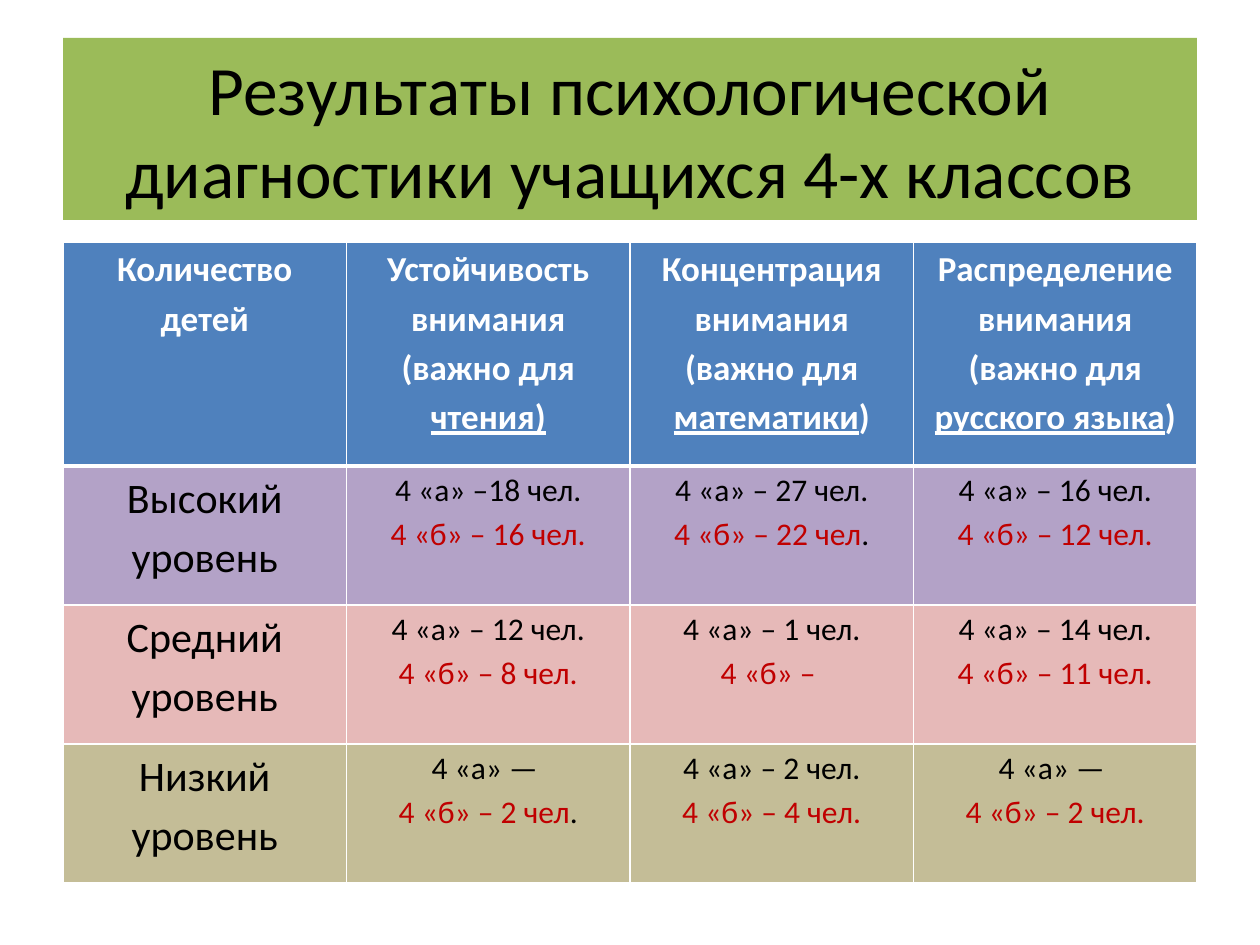
"""Builds a slide with a table of attention test results for the fourth grades."""
from lxml.etree import SubElement
from pptx import Presentation
from pptx.dml.color import RGBColor
from pptx.enum.text import MSO_ANCHOR, MSO_AUTO_SIZE, PP_ALIGN
from pptx.oxml.ns import qn
from pptx.util import Pt

PX = 914400 / 126
BLACK = RGBColor(0, 0, 0)
WHITE = RGBColor(255, 255, 255)
RED = RGBColor(0xC0, 0, 0)
GREEN = RGBColor(0x9B, 0xBB, 0x59)
BLUE = RGBColor(0x4F, 0x81, 0xBD)
PURPLE = RGBColor(0xB3, 0xA2, 0xC7)
PINK = RGBColor(0xE6, 0xB9, 0xB8)
TAN = RGBColor(0xC4, 0xBD, 0x97)


def px(length):
    return round(length * PX)


def write(paragraph, text, size, color=BLACK, bold=False, underline=False):
    paragraph.alignment = PP_ALIGN.CENTER
    run = paragraph.add_run()
    run.text = text
    run.font.name = "Calibri"
    run.font.size = Pt(size)
    run.font.color.rgb = color
    run.font.bold = bold
    run.font.underline = underline


prs = Presentation()
prs.slide_width, prs.slide_height = px(1260), px(945)
slide = prs.slides.add_slide(prs.slide_layouts[5])

title = slide.shapes.title
title.left, title.top, title.width, title.height = px(63), px(38), px(1134), px(182)
title.fill.solid()
title.fill.fore_color.rgb = GREEN
title.text_frame.auto_size = MSO_AUTO_SIZE.NONE
title.text_frame.vertical_anchor = MSO_ANCHOR.MIDDLE
write(title.text_frame.paragraphs[0],
      "Результаты психологической диагностики учащихся 4-х классов", 39.6)

headings = [
    ("Количество детей", "", ""),
    ("Устойчивость внимания (важно для ", "чтения)", ""),
    ("Концентрация внимания (важно для ", "математики", ")"),
    ("Распределение внимания (важно для ", "русского языка", ")"),
]
levels = [
    ("Высокий уровень", PURPLE, [
        ("4 «а» –18 чел.", "4 «б» – 16 чел.", ""),
        ("4 «а» – 27 чел.", "4 «б» – 22 чел", "."),
        ("4 «а» – 16 чел.", "4 «б» – 12 чел.", "")]),
    ("Средний уровень", PINK, [
        ("4 «а» – 12 чел.", "4 «б» – 8 чел.", ""),
        ("4 «а» – 1 чел.", "4 «б» – ", ""),
        ("4 «а» – 14 чел.", "4 «б» – 11 чел.", "")]),
    ("Низкий уровень", TAN, [
        ("4 «а» — ", "4 «б» – 2 чел", "."),
        ("4 «а» – 2 чел.", "4 «б» – 4 чел.", ""),
        ("4 «а» — ", "4 «б» – 2 чел.", "")]),
]

results = slide.shapes.add_table(4, 4, px(63), px(242), px(1134), px(641)).table
row_heights = [224, 139, 139, 139]
row_fills = [BLUE] + [fill for _, fill, _ in levels]

for row, (height, fill) in enumerate(zip(row_heights, row_fills)):
    results.rows[row].height = px(height)
    for cell in results.rows[row].cells:
        cell.margin_left = cell.margin_right = px(9)
        cell.margin_top = cell.margin_bottom = 0
        for side in ("lnL", "lnR", "lnT", "lnB"):
            under_header = (row, side) in ((0, "lnB"), (1, "lnT"))
            border = SubElement(cell._tc.get_or_add_tcPr(), qn(f"a:{side}"),
                                w=str(Pt(3 if under_header else 1)))
            SubElement(SubElement(border, qn("a:solidFill")), qn("a:srgbClr"), val=str(WHITE))
        cell.fill.solid()
        cell.fill.fore_color.rgb = fill

for column, (lead, subject, ending) in enumerate(headings):
    heading = results.cell(0, column).text_frame.paragraphs[0]
    heading.line_spacing = 1.15
    for text, underline in ((lead, False), (subject, True), (ending, False)):
        if text:
            write(heading, text, 20, color=WHITE, bold=True, underline=underline)

for row, (level, _, counts) in enumerate(levels, start=1):
    label = results.cell(row, 0).text_frame.paragraphs[0]
    label.line_spacing = 1.15
    write(label, level, 24)
    for column, (class_a, class_b, ending) in enumerate(counts, start=1):
        frame = results.cell(row, column).text_frame
        first, second = frame.paragraphs[0], frame.add_paragraph()
        first.line_spacing = second.line_spacing = 1.15
        write(first, class_a, 18)
        write(second, class_b, 18, color=RED)
        if ending:
            write(second, ending, 18)

prs.save("out.pptx")
